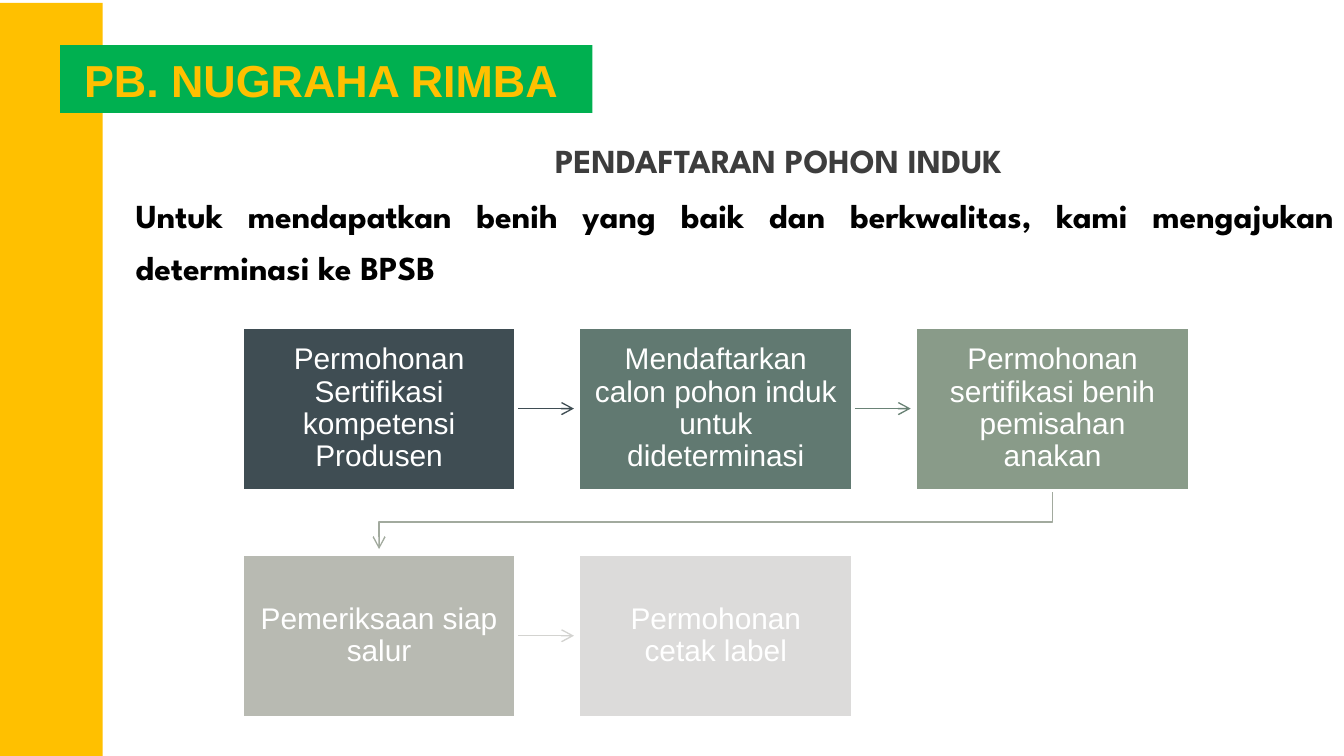
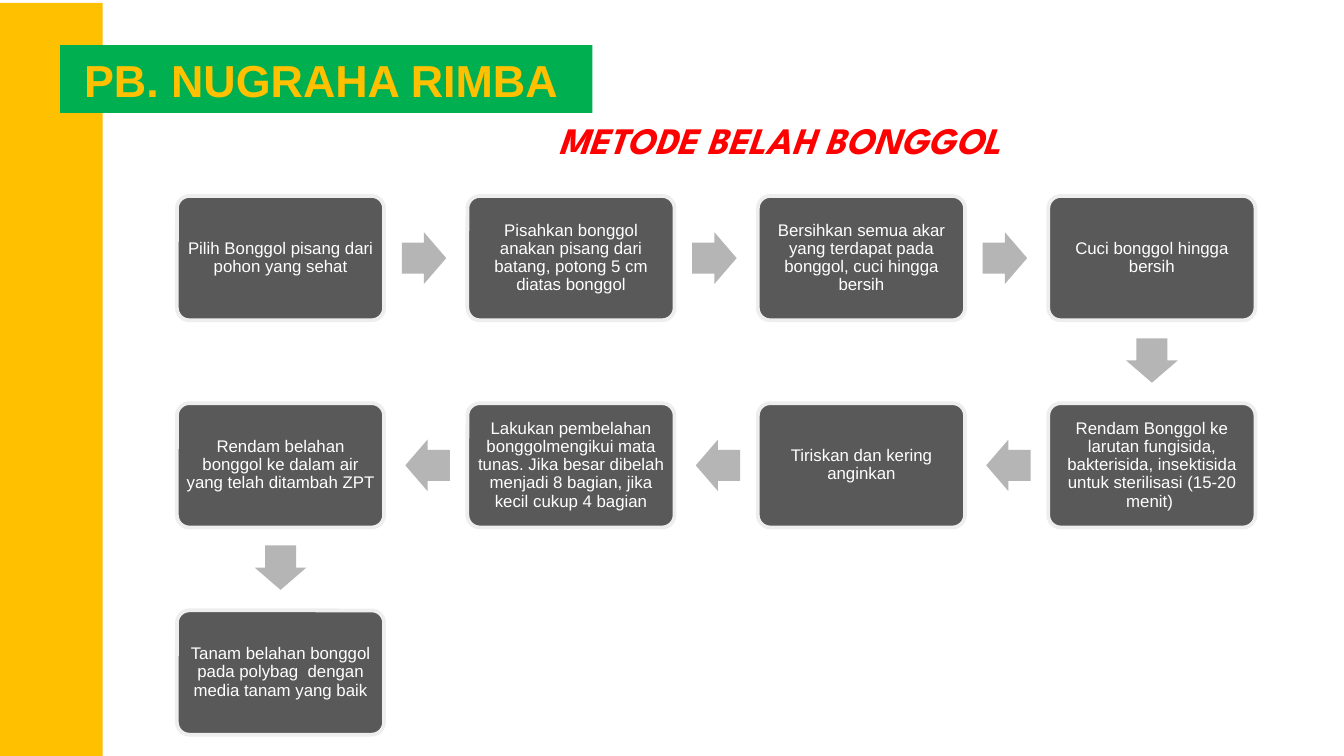
from lxml.etree import SubElement
from pptx import Presentation
from pptx.dml.color import RGBColor
from pptx.enum.shapes import MSO_CONNECTOR, MSO_SHAPE
from pptx.enum.text import MSO_ANCHOR, PP_ALIGN
from pptx.oxml.ns import qn
from pptx.util import Pt

AMBER = RGBColor(0xFF, 0xC0, 0x00)
GREEN = RGBColor(0x00, 0xB0, 0x50)
RED = RGBColor(0xFF, 0x00, 0x00)
BLACK = RGBColor(0x00, 0x00, 0x00)
WHITE = RGBColor(0xFF, 0xFF, 0xFF)
CHARCOAL = RGBColor(0x3D, 0x3D, 0x3D)
STEP_GREY = RGBColor(0x59, 0x59, 0x59)
ARROW_GREY = RGBColor(0xB5, 0xB5, 0xB5)
BORDER_GREY = RGBColor(0xEE, 0xEE, 0xEE)
SLATE = RGBColor(0x3F, 0x4D, 0x53)
PINE = RGBColor(0x61, 0x79, 0x71)
PINE_LINE = RGBColor(0x6A, 0x83, 0x76)
SAGE = RGBColor(0x89, 0x9B, 0x89)
SAGE_LINE = RGBColor(0xA2, 0xAA, 0x9E)
STONE = RGBColor(0xB8, 0xBA, 0xB2)
STONE_LINE = RGBColor(0xD3, 0xD3, 0xD0)
MIST = RGBColor(0xDC, 0xDB, 0xDA)

BODY_FONT = "Arial"
HEADING_FONT = "League Spartan"
PRODUCER = "PB. NUGRAHA RIMBA "

REGISTRATION_STEPS = [
    ("Permohonan Sertifikasi kompetensi Produsen", SLATE),
    ("Mendaftarkan calon pohon induk untuk dideterminasi", PINE),
    ("Permohonan sertifikasi benih pemisahan anakan", SAGE),
    ("Pemeriksaan siap salur", STONE),
    ("Permohonan cetak label", MIST),
]
REGISTRATION_LINKS = [SLATE, PINE_LINE, SAGE_LINE, STONE_LINE]
SPLITTING_STEPS = [
    "Pilih Bonggol pisang dari pohon yang sehat",
    "Pisahkan bonggol anakan pisang dari batang, potong 5 cm diatas bonggol",
    "Bersihkan semua akar yang terdapat pada bonggol, cuci hingga bersih",
    "Cuci bonggol hingga bersih",
    "Rendam Bonggol ke larutan fungisida, bakterisida, insektisida "
    "untuk sterilisasi (15-20 menit) ",
    "Tiriskan dan kering anginkan",
    "Lakukan pembelahan bonggolmengikui mata tunas. Jika besar dibelah "
    "menjadi 8 bagian, jika kecil cukup 4 bagian",
    "Rendam belahan bonggol ke dalam air yang telah ditambah ZPT",
    "Tanam belahan bonggol pada polybag  dengan media tanam yang baik",
]


def write(frame, text, size, color, font=BODY_FONT, bold=False, italic=False,
          align=PP_ALIGN.CENTER, spacing=1.0, inset=5):
    """Fill a text frame with one formatted paragraph."""
    frame.text = text
    frame.margin_left = frame.margin_right = Pt(inset)
    frame.margin_top = frame.margin_bottom = Pt(inset)
    frame.word_wrap = True
    paragraph = frame.paragraphs[0]
    paragraph.alignment = align
    paragraph.line_spacing = spacing
    face = paragraph.runs[0].font
    face.name, face.size, face.bold, face.italic = font, Pt(size), bold, italic
    face.color.rgb = color


def add_block(slide, kind, left, top, width, height, fill, border=None):
    """Add a flat filled shape with an optional border."""
    block = slide.shapes.add_shape(kind, Pt(left), Pt(top), Pt(width), Pt(height))
    block.shadow.inherit = False
    block.fill.solid()
    block.fill.fore_color.rgb = fill
    if border is None:
        block.line.fill.background()
    else:
        block.line.color.rgb = border
        block.line.width = Pt(2)
    return block


def add_step(slide, kind, left, top, width, height, fill, border, text, size, inset):
    """Add one process step with centred white text."""
    step = add_block(slide, kind, left, top, width, height, fill, border)
    write(step.text_frame, text, size, WHITE, spacing=0.9, inset=inset)
    step.text_frame.vertical_anchor = MSO_ANCHOR.MIDDLE
    return step


def add_heading(slide, left, top, width, height, text, size, color, **style):
    """Add a bold heading in the heading typeface."""
    heading = slide.shapes.add_textbox(Pt(left), Pt(top), Pt(width), Pt(height))
    write(heading.text_frame, text, size, color, HEADING_FONT, bold=True,
          spacing=1.3, **style)


def style_link(link, color):
    """Make a line thin, flat and arrow-tipped."""
    link.line.color.rgb = color
    link.line.width = Pt(0.75)
    SubElement(link.line._get_or_add_ln(), qn("a:tailEnd"), type="arrow")


def add_straight_link(slide, left, right, y, color):
    """Add a horizontal arrow."""
    link = slide.shapes.add_connector(
        MSO_CONNECTOR.STRAIGHT, Pt(left), Pt(y), Pt(right), Pt(y))
    style_link(link, color)
    SubElement(link._element.spPr, qn("a:effectLst"))


def add_return_link(slide, points, color):
    """Add a bent arrow through the given points."""
    start, *rest = [(Pt(x), Pt(y)) for x, y in points]
    builder = slide.shapes.build_freeform(*start)
    builder.add_line_segments(rest, close=False)
    link = builder.convert_to_shape()
    link.fill.background()
    style_link(link, color)
    link.shadow.inherit = False


def add_frame(slide):
    """Add the side band and the producer banner."""
    add_block(slide, MSO_SHAPE.RECTANGLE, 0, 1.5, 55, 403.5, AMBER)
    banner = add_block(slide, MSO_SHAPE.RECTANGLE, 32.2, 24.2, 285.2, 36.3, GREEN)
    write(banner.text_frame, PRODUCER, 24, AMBER, bold=True, inset=3.6)
    banner.text_frame.word_wrap = False
    banner.text_frame.vertical_anchor = MSO_ANCHOR.MIDDLE


def add_registration_flow(slide):
    """Lay out the registration steps in rows of three with links."""
    left, top, width, height = 129.6, 175, 147, 87.8
    column_pitch, row_pitch, columns = 180.4, 121.7, 3
    corners = [(left + i % columns * column_pitch, top + i // columns * row_pitch)
               for i in range(len(REGISTRATION_STEPS))]
    for (x, y), (text, fill) in zip(corners, REGISTRATION_STEPS):
        add_step(slide, MSO_SHAPE.RECTANGLE, x, y, width, height, fill, WHITE,
                 text, 16, 8.6)
    for (x, y), (next_x, next_y), color in zip(corners, corners[1:], REGISTRATION_LINKS):
        if y == next_y:
            add_straight_link(slide, x + width + 1, next_x - 2.5, y + height / 2, color)
        else:
            middle = (y + height + next_y) / 2
            start_x, end_x = x + width / 2, next_x + width / 2
            add_return_link(slide, [(start_x, y + height + 1), (start_x, middle),
                                    (end_x, middle), (end_x, next_y - 2.5)], color)


def add_splitting_flow(slide):
    """Lay out the splitting steps in a winding path of four columns."""
    left, top, width, height = 94.8, 105, 111, 66.6
    column_pitch, row_pitch, columns = 155.6, 111, 4
    arrow_width, arrow_height = 23.8, 27.6
    centers = []
    for i, text in enumerate(SPLITTING_STEPS):
        row, column = divmod(i, columns)
        if row % 2:
            column = columns - 1 - column
        x, y = left + column * column_pitch, top + row * row_pitch
        step = add_step(slide, MSO_SHAPE.ROUNDED_RECTANGLE, x, y, width, height,
                        STEP_GREY, BORDER_GREY, text, 9, 2.7)
        step.adjustments[0] = 0.1
        centers.append((x + width / 2, y + height / 2))
    for (x, y), (next_x, next_y) in zip(centers, centers[1:]):
        arrow_x, arrow_y = x + (next_x - x) * 0.494, y + (next_y - y) * 0.494
        arrow = add_block(slide, MSO_SHAPE.RIGHT_ARROW, arrow_x - arrow_width / 2,
                          arrow_y - arrow_height / 2, arrow_width, arrow_height,
                          ARROW_GREY)
        arrow.adjustments[0], arrow.adjustments[1] = 0.6, 0.5
        arrow.rotation = 90 if next_y > y else 180 if next_x < x else 0


def add_registration_slide(slide):
    """Build the mother tree registration slide."""
    add_heading(slide, 235.4, 63.4, 363.6, 60.5, "PENDAFTARAN POHON INDUK", 18, CHARCOAL)
    add_frame(slide)
    add_heading(slide, 67.7, 92.9, 652.3, 71.3,
                "Untuk mendapatkan benih yang baik dan berkwalitas, "
                "kami mengajukan determinasi ke BPSB",
                18, BLACK, align=PP_ALIGN.JUSTIFY)
    add_registration_flow(slide)


def add_splitting_slide(slide):
    """Build the corm splitting method slide."""
    add_heading(slide, 228.2, 50.4, 384.5, 56.9, "METODE BELAH BONGGOL ", 20, RED,
                italic=True)
    add_frame(slide)
    add_splitting_flow(slide)


def main():
    """Build and save the presentation."""
    presentation = Presentation()
    presentation.slide_width, presentation.slide_height = Pt(720), Pt(405)
    blank = presentation.slide_layouts[6]
    for build in (add_registration_slide, add_splitting_slide):
        build(presentation.slides.add_slide(blank))
    presentation.save("out.pptx")


if __name__ == "__main__":
    main()
